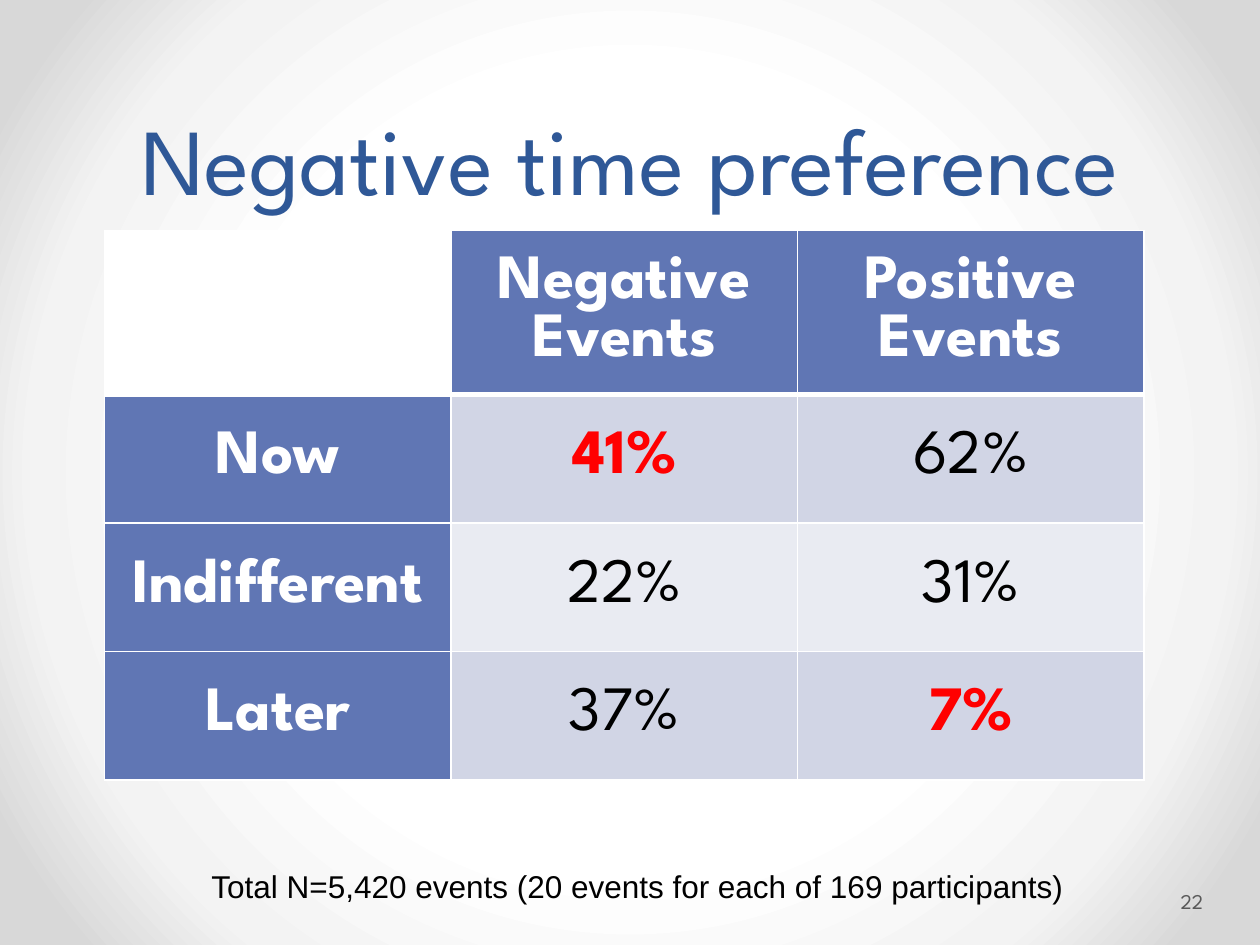
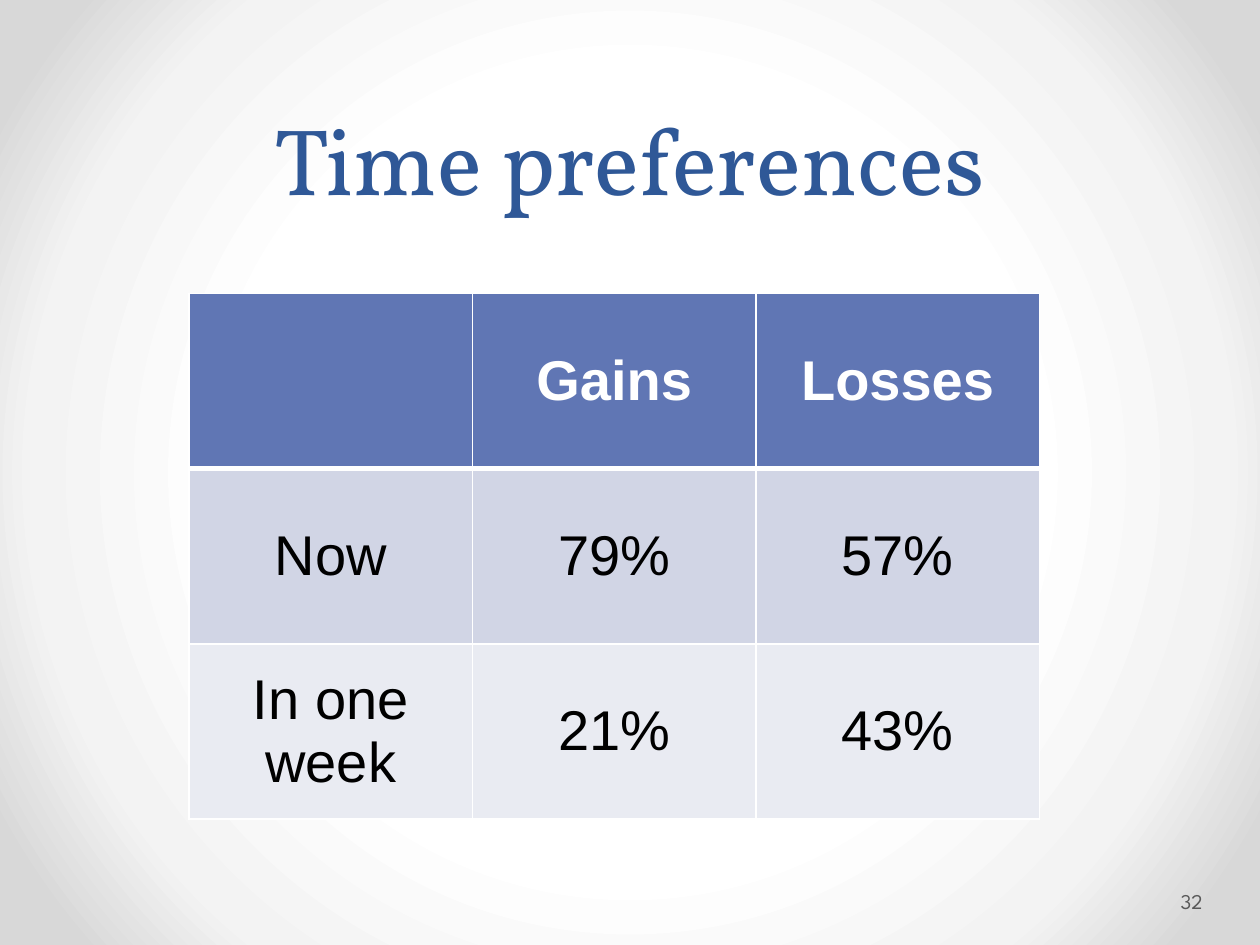
from lxml.etree import SubElement as Sub
from pptx import Presentation
from pptx.dml.color import RGBColor
from pptx.enum.text import MSO_ANCHOR as Anchor, PP_ALIGN as Align
from pptx.oxml.ns import qn
from pptx.util import Inches, Pt

# Shared look
SANS, SERIF, PLAIN = "League Spartan", "Vollkorn", "Arial"
NAVY, BLUE, GREY = "2F5897", "6076B4", "595959"
WHITE, BLACK, RED = "FFFFFF", "000000", "FF0000"
BANDS = ["D1D5E5", "E9EBF2"]
GLOW = [(0, WHITE), (50, WHITE), (76, "F3F3F3"), (92, "D8D8D8"), (100, "D8D8D8")]


def rgb(code):
    return RGBColor.from_string(code)


def style(para, face, size, color, bold=False, align=Align.LEFT):
    font = para.font
    font.name, font.size, font.bold = face, Pt(size), bold
    font.color.rgb = rgb(color)
    para.alignment = align


def add_glow(slide):
    """Radial background, white in the middle and grey at the corners."""
    slide.background.fill.gradient()
    grad = slide._element.find(".//" + qn("a:gradFill"))
    for child in list(grad):
        grad.remove(child)
    stops = Sub(grad, qn("a:gsLst"))
    for pos, code in GLOW:
        stop = Sub(stops, qn("a:gs"), pos=str(pos * 1000))
        Sub(stop, qn("a:srgbClr"), val=code)
    ring = Sub(grad, qn("a:path"), path="circle")
    Sub(ring, qn("a:fillToRect"), l="50000", t="50000", r="50000", b="50000")


def add_text(slide, text, box, face, size, color, align=Align.LEFT,
             anchor=Anchor.TOP, left=0.1, right=0.1):
    frame = slide.shapes.add_textbox(*map(Inches, box)).text_frame
    frame.word_wrap = True
    frame.vertical_anchor = anchor
    frame.margin_left, frame.margin_right = Inches(left), Inches(right)
    para = frame.paragraphs[0]
    para.text = text
    style(para, face, size, color, align=align)
    return para


def add_edges(cell, top, bottom):
    props = cell._tc.get_or_add_tcPr()
    for side, width in (("L", 1), ("R", 1), ("T", top), ("B", bottom)):
        line = Sub(props, qn("a:ln" + side), w=str(Pt(width)))
        fill = Sub(line, qn("a:solidFill"))
        Sub(fill, qn("a:srgbClr"), val=WHITE)


def add_grid(slide, rows, spot, size, face, points, side=False, marked=()):
    """Banded table; side=True makes the first column a header as well."""
    wide, high = size
    count = len(rows[0])
    table = slide.shapes.add_table(
        len(rows), count, *map(Inches, spot),
        Inches(wide * count), Inches(high * len(rows))).table
    for col in table.columns:
        col.width = Inches(wide)
    for r, row in enumerate(rows):
        table.rows[r].height = Inches(high)
        for c, text in enumerate(row):
            cell = table.cell(r, c)
            head = r == 0 or (side and c == 0)
            hot = text in marked
            add_edges(cell, 3 if r == 1 else 1, 3 if r == 0 else 1)
            blank = side and r == c == 0
            fill = WHITE if blank else BLUE if head else BANDS[(r - 1) % 2]
            cell.fill.solid()
            cell.fill.fore_color.rgb = rgb(fill)
            cell.vertical_anchor = Anchor.MIDDLE
            para = cell.text_frame.paragraphs[0]
            para.text = text
            color = WHITE if head else RED if hot else BLACK
            style(para, face, points, color, head or hot, Align.CENTER)


def add_page(deck, title, face, number):
    slide = deck.slides.add_slide(deck.slide_layouts[6])
    add_glow(slide)
    para = add_text(slide, title, (0.5, 0, 9, 1.75), face, 54, NAVY,
                    Align.CENTER, Anchor.BOTTOM)
    para.line_spacing = 1.07
    add_text(slide, str(number), (9.34, 6.95, 0.61, 0.4), SANS, 12, GREY,
             anchor=Anchor.MIDDLE, left=0.03, right=0.05)
    return slide


def main():
    deck = Presentation()
    deck.slide_width, deck.slide_height = Inches(10), Inches(7.5)

    # Events by preferred time
    slide = add_page(deck, "Negative time preference", SANS, 22)
    events = [["", "Negative Events", "Positive Events"],
              ["Now", "41%", "62%"],
              ["Indifferent", "22%", "31%"],
              ["Later", "37%", "7%"]]
    add_grid(slide, events, (0.83, 1.83), (2.75, 1.02), SANS, 36,
             side=True, marked=("41%", "7%"))
    add_text(slide, "Total N=5,420 events (20 events for each of 169 participants)",
             (1.58, 6.83, 6.99, 0.4), PLAIN, 18, BLACK)

    # Gains against losses
    slide = add_page(deck, "Time preferences", SERIF, 32)
    choices = [["", "Gains", "Losses"],
               ["Now", "79%", "57%"],
               ["In one week", "21%", "43%"]]
    add_grid(slide, choices, (1.5, 2.33), (2.25, 1.39), PLAIN, 32)

    deck.save("out.pptx")


if __name__ == "__main__":
    main()
